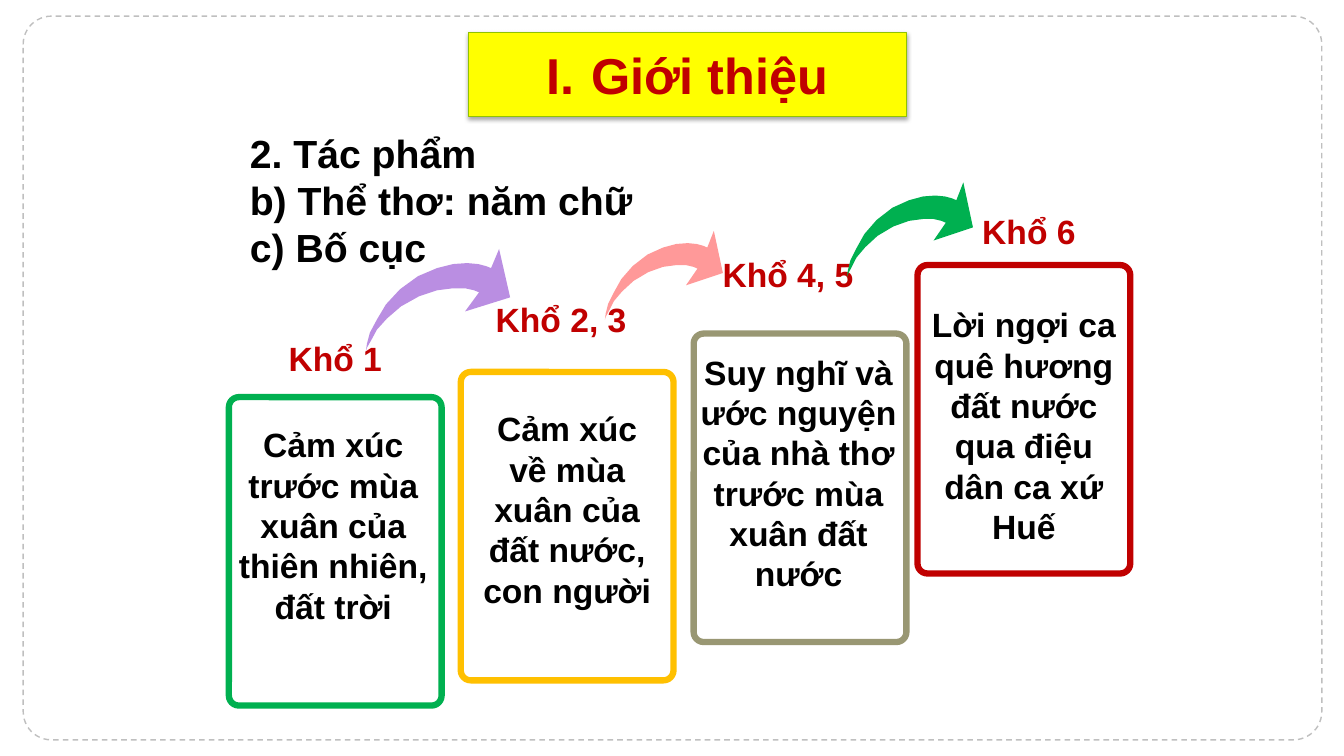
import pptx
import pptx.util
import pptx.dml.color
import pptx.enum.dml
import pptx.enum.shapes
import pptx.enum.text
import pptx.oxml
import pptx.oxml.ns

Inches = pptx.util.Inches
Pt = pptx.util.Pt
RGBColor = pptx.dml.color.RGBColor
PP_ALIGN = pptx.enum.text.PP_ALIGN
MSO_ANCHOR = pptx.enum.text.MSO_ANCHOR

BLACK = RGBColor(0x00, 0x00, 0x00)
RED = RGBColor(0xC0, 0x00, 0x00)
GREEN = RGBColor(0x00, 0xB0, 0x50)
AMBER = RGBColor(0xFF, 0xC0, 0x00)
OLIVE = RGBColor(0x99, 0x97, 0x73)
PINK = RGBColor(0xFF, 0x99, 0x99)
PURPLE = RGBColor(0xBA, 0x8E, 0xE2)
YELLOW = RGBColor(0xFF, 0xFF, 0x00)
LIME = RGBColor(0x91, 0xC2, 0x00)
GREY = RGBColor(0xBF, 0xBF, 0xBF)


def write_text(shape, lines, size, color, align):
    tf = shape.text_frame
    tf.word_wrap = True
    tf.auto_size = pptx.enum.text.MSO_AUTO_SIZE.SHAPE_TO_FIT_TEXT
    for i, line in enumerate(lines):
        p = tf.paragraphs[0] if i == 0 else tf.add_paragraph()
        p.alignment = align
        r = p.add_run()
        r.text = line
        for key, value in {"name": "Arial", "size": Pt(size), "bold": True}.items():
            setattr(r.font, key, value)
        r.font.color.rgb = color


def add_outline(s, at, radius, color, width):
    sp = s.shapes.add_shape(
        pptx.enum.shapes.MSO_SHAPE.ROUNDED_RECTANGLE, *map(Inches, at))
    sp.adjustments[0] = radius
    sp.shadow.inherit = False
    sp.fill.background()
    sp.line.color.rgb = color
    sp.line.width = Pt(width)
    return sp


prs = pptx.Presentation()
prs.slide_width = Inches(13.33)
prs.slide_height = Inches(7.5)
s = prs.slides.add_slide(prs.slide_layouts[5])

frame = add_outline(s, (0.23, 0.16, 12.88, 7.18), 0.039, GREY, 1)
frame.line.dash_style = pptx.enum.dml.MSO_LINE.DASH

title = s.shapes.title
title_box = {"left": 4.65, "top": 0.38, "width": 4.34, "height": 0.71}
for key, value in title_box.items():
    setattr(title, key, Inches(value))
title.fill.solid()
title.fill.fore_color.rgb = YELLOW
title.line.color.rgb = LIME
title.line.width = Pt(0.75)
title.text_frame.vertical_anchor = MSO_ANCHOR.MIDDLE
write_text(title, ["Giới thiệu"], 36, RED, PP_ALIGN.CENTER)

pPr = title.text_frame.paragraphs[0]._p.get_or_add_pPr()
pPr.set("marL", str(Inches(0.44)))
pPr.set("indent", str(Inches(-0.44)))
ns = pptx.oxml.ns.nsdecls("a")
pPr.append(pptx.oxml.parse_xml(f'<a:buFont {ns} typeface="+mj-lt"/>'))
pPr.append(pptx.oxml.parse_xml(f'<a:buAutoNum {ns} type="romanUcPeriod"/>'))
title._element.spPr.append(pptx.oxml.parse_xml(
    f'<a:effectLst {ns}><a:outerShdw blurRad="{Pt(3.1)}" dist="{Pt(1.8)}" '
    'dir="5400000" rotWithShape="0"><a:srgbClr val="000000">'
    '<a:alpha val="35000"/></a:srgbClr></a:outerShdw></a:effectLst>'))

stanzas = [
    ("Khổ 1", (2.54, 3.3), (2.27, 3.94), GREEN,
     "Cảm xúc trước mùa xuân của thiên nhiên, đất trời", (2.26, 4.16, 2.09, 2.12)),
    ("Khổ 2, 3", (4.78, 2.92), (4.57, 3.69), AMBER,
     "Cảm xúc về mùa xuân của đất nước, con người", (4.63, 4, 1.99, 2.12)),
    ("Khổ 4, 5", (7.03, 2.47), (6.88, 3.31), OLIVE,
     "Suy nghĩ và ước nguyện của nhà thơ trước mùa xuân đất nước",
     (6.85, 3.44, 2.14, 2.52)),
    ("Khổ 6", (9.42, 2.04), (9.1, 2.63), RED,
     "Lời ngợi ca quê hương đất nước qua điệu dân ca xứ Huế",
     (9.1, 2.97, 2.11, 2.52)),
]
for label, label_at, box_at, color, content, content_at in stanzas:
    add_outline(s, (*box_at, 2.11, 3.06), 0.047, color, 4.5)
    for line, at, ink in ((content, content_at, BLACK),
                          (label, (*label_at, 1.57, 0.5), RED)):
        tb = s.shapes.add_textbox(*map(Inches, at))
        write_text(tb, [line], 24, ink, PP_ALIGN.CENTER)

ARROW_W, ARROW_H = 144, 101
ARROW = [
    (0, 101), (1, 98), (5, 91), (11, 80), (21, 69), (35, 57), (53, 47),
    (71, 41), (87, 39), (99, 39), (108, 41), (113, 43), (99, 62), (144, 48),
    (133, 0), (125, 19), (120, 17), (112, 15), (101, 14), (87, 15), (71, 19),
    (52, 27), (34, 40), (20, 55), (11, 70), (4, 83), (1, 94),
]
arrows = [
    (3.63, 2.47, 1.43, 1.01, PURPLE),
    (6, 2.29, 1.17, 0.88, PINK),
    (8.4, 1.81, 1.25, 0.94, GREEN),
]
for left, top, width, height, color in arrows:
    points = [(Inches(left + x * width / ARROW_W), Inches(top + y * height / ARROW_H))
              for x, y in ARROW]
    fb = s.shapes.build_freeform(*points[0])
    fb.add_line_segments(points[1:], close=True)
    sp = fb.convert_to_shape()
    sp.shadow.inherit = False
    sp.fill.solid()
    sp.fill.fore_color.rgb = color
    sp.line.fill.background()

outline = s.shapes.add_textbox(*map(Inches, (2.38, 1.23, 5, 1.51)))
write_text(outline, ["2. Tác phẩm", "b) Thể thơ: năm chữ", "c) Bố cục"],
           28, BLACK, PP_ALIGN.JUSTIFY)

prs.save("out.pptx")
